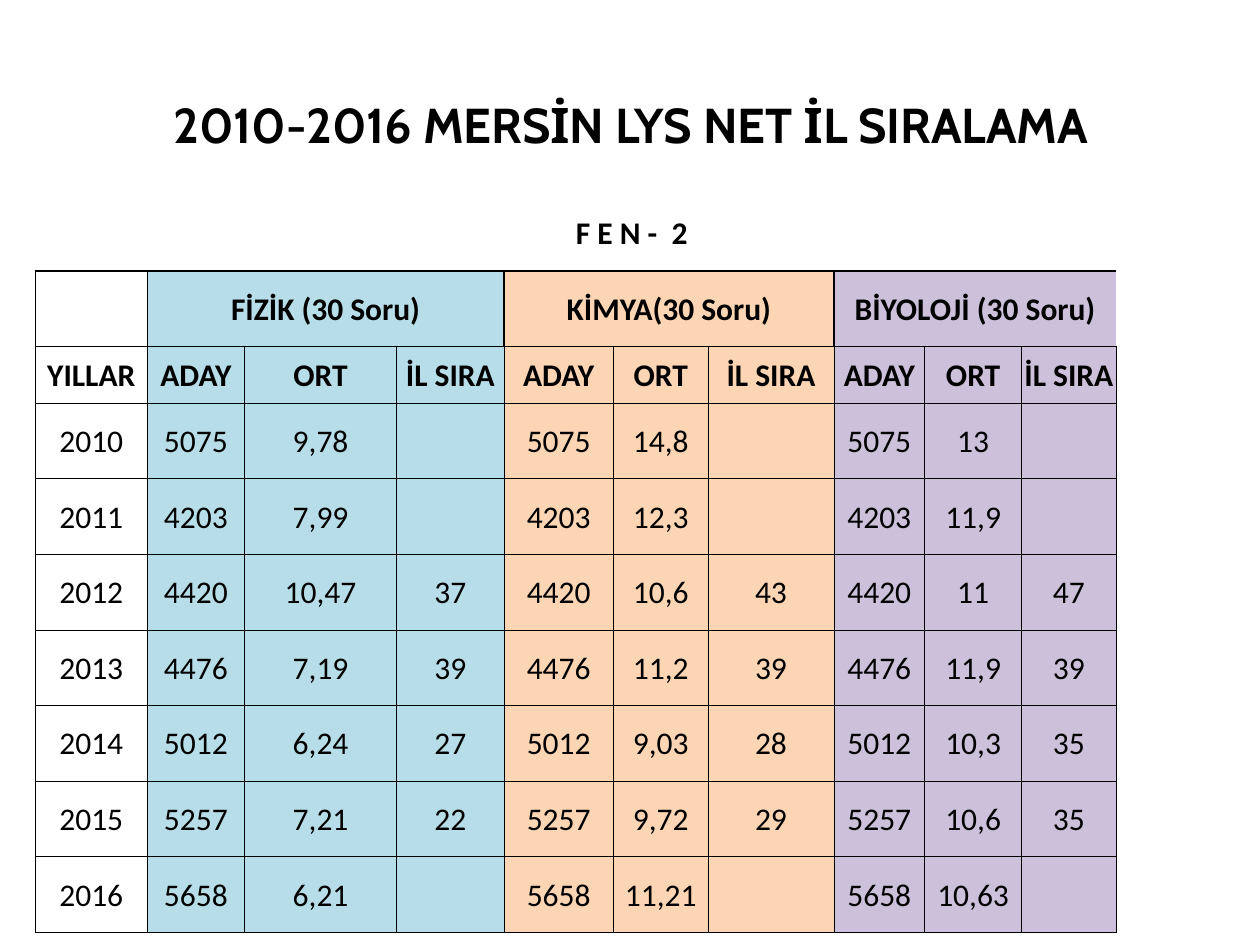
from pptx import Presentation
from pptx.dml.color import RGBColor
from pptx.enum.text import MSO_ANCHOR, PP_ALIGN
from pptx.oxml.ns import qn
from pptx.util import Inches, Pt
from lxml import etree

CENTER = PP_ALIGN.CENTER
MIDDLE = MSO_ANCHOR.MIDDLE
TITLE_ONLY = 5

COLORS = {"ink": "000000", "physics": "B7DEE8", "chemistry": "FCD5B4",
          "biology": "CCC0DA"}
SUBJECTS = [("physics", "FİZİK (30 Soru)"),
            ("chemistry", "KİMYA(30 Soru)"),
            ("biology", "BİYOLOJİ (30 Soru)")]
HEADS = ["ADAY", "ORT", "İL SIRA"]
# Year, candidates, then average and province rank for each subject
RESULTS = [
    ("2010", "5075", ("9,78", ""), ("14,8", ""), ("13", "")),
    ("2011", "4203", ("7,99", ""), ("12,3", ""), ("11,9", "")),
    ("2012", "4420", ("10,47", "37"), ("10,6", "43"), ("11", "47")),
    ("2013", "4476", ("7,19", "39"), ("11,2", "39"), ("11,9", "39")),
    ("2014", "5012", ("6,24", "27"), ("9,03", "28"), ("10,3", "35")),
    ("2015", "5257", ("7,21", "22"), ("9,72", "29"), ("10,6", "35")),
    ("2016", "5658", ("6,21", ""), ("11,21", ""), ("10,63", "")),
]
WIDTHS = [0.89, 0.77, 1.21, 0.85, 0.87, 0.75, 1, 0.72, 0.77, 0.75]
HEIGHTS = [0.6, 0.6, 0.45] + [0.6] * len(RESULTS)
THIN, THICK = 0.5, 1


class Deck:
    def __init__(self):
        self.file = Presentation()
        self.file.slide_width = Inches(10)
        self.file.slide_height = Inches(7.5)
        self.slide = self.file.slides.add_slide(
            self.file.slide_layouts[TITLE_ONLY])

    def label(self, frame, text, font, size, bold):
        frame.text = text
        para = frame.paragraphs[0]
        para.alignment = CENTER
        for run in para.runs:
            run.font.name = font
            run.font.size = Pt(size)
            run.font.bold = bold
            run.font.color.rgb = RGBColor.from_string(COLORS["ink"])

    def title(self, text, left, top, width, height):
        box = self.slide.shapes.title
        box.left, box.top = Inches(left), Inches(top)
        box.width, box.height = Inches(width), Inches(height)
        box.text_frame.word_wrap = True
        box.text_frame.vertical_anchor = MIDDLE
        self.label(box.text_frame, text, "Cabin", 28, True)

    def table(self, left, top, widths, heights):
        grid = self.slide.shapes.add_table(
            len(heights), len(widths), Inches(left), Inches(top),
            Inches(sum(widths)), Inches(sum(heights))).table
        grid.first_row = grid.horz_banding = False
        for col, width in zip(grid.columns, widths):
            col.width = Inches(width)
        for row, height in zip(grid.rows, heights):
            row.height = Inches(height)
        return grid

    def cell(self, cell, text, fill, bold, edges):
        cell.margin_left = cell.margin_right = cell.margin_top = Inches(0.01)
        cell.margin_bottom = 0
        cell.vertical_anchor = MIDDLE
        self.label(cell.text_frame, text, "Calibri", 18, bold)
        if fill:
            cell.fill.solid()
            cell.fill.fore_color.rgb = RGBColor.from_string(COLORS[fill])
        else:
            cell.fill.background()
        self.borders(cell, edges)

    def borders(self, cell, edges):
        """Draw the left, right, top and bottom edges; 0 means no line."""
        props = cell._tc.get_or_add_tcPr()
        for spot, (side, width) in enumerate(zip("LRTB", edges)):
            line = etree.Element(qn(f"a:ln{side}"), w=str(Pt(width)))
            if width:
                paint = etree.SubElement(line, qn("a:solidFill"))
                etree.SubElement(paint, qn("a:srgbClr"), val=COLORS["ink"])
            else:
                etree.SubElement(line, qn("a:noFill"))
            props.insert(spot, line)


def get_edges(row, col):
    if row == 0:
        return 0, THIN if col == len(WIDTHS) - 1 else 0, 0, THICK
    if row == 1:
        inner = (col - 1) % 3
        left = THICK if col == 0 or inner == 0 else 0
        right = THICK if col == 0 or inner == 2 else 0
        return left, right, THICK, THICK
    return THIN, THIN, THICK if row == 2 else THIN, THIN


def get_rows():
    names = [""]
    for _, name in SUBJECTS:
        names += [name, "", ""]
    rows = [["", "F E N -  2"] + [""] * 8, names,
            ["YILLAR"] + HEADS * len(SUBJECTS)]
    for year, count, *scores in RESULTS:
        row = [year]
        for mean, rank in scores:
            row += [count, mean, rank]
        rows.append(row)
    return rows


def main():
    deck = Deck()
    deck.title("2010-2016 MERSİN LYS NET İL SIRALAMA", 0.55, 0.7, 8.91, 0.57)
    grid = deck.table(0.28, 1.55, WIDTHS, HEIGHTS)
    for r, row in enumerate(get_rows()):
        for c, text in enumerate(row):
            fill = SUBJECTS[(c - 1) // 3][0] if r and c else None
            deck.cell(grid.cell(r, c), text, fill, r < 3, get_edges(r, c))
    grid.cell(0, 1).merge(grid.cell(0, 9))
    for first in (1, 4, 7):
        grid.cell(1, first).merge(grid.cell(1, first + 2))
    deck.file.save("out.pptx")


if __name__ == "__main__":
    main()
